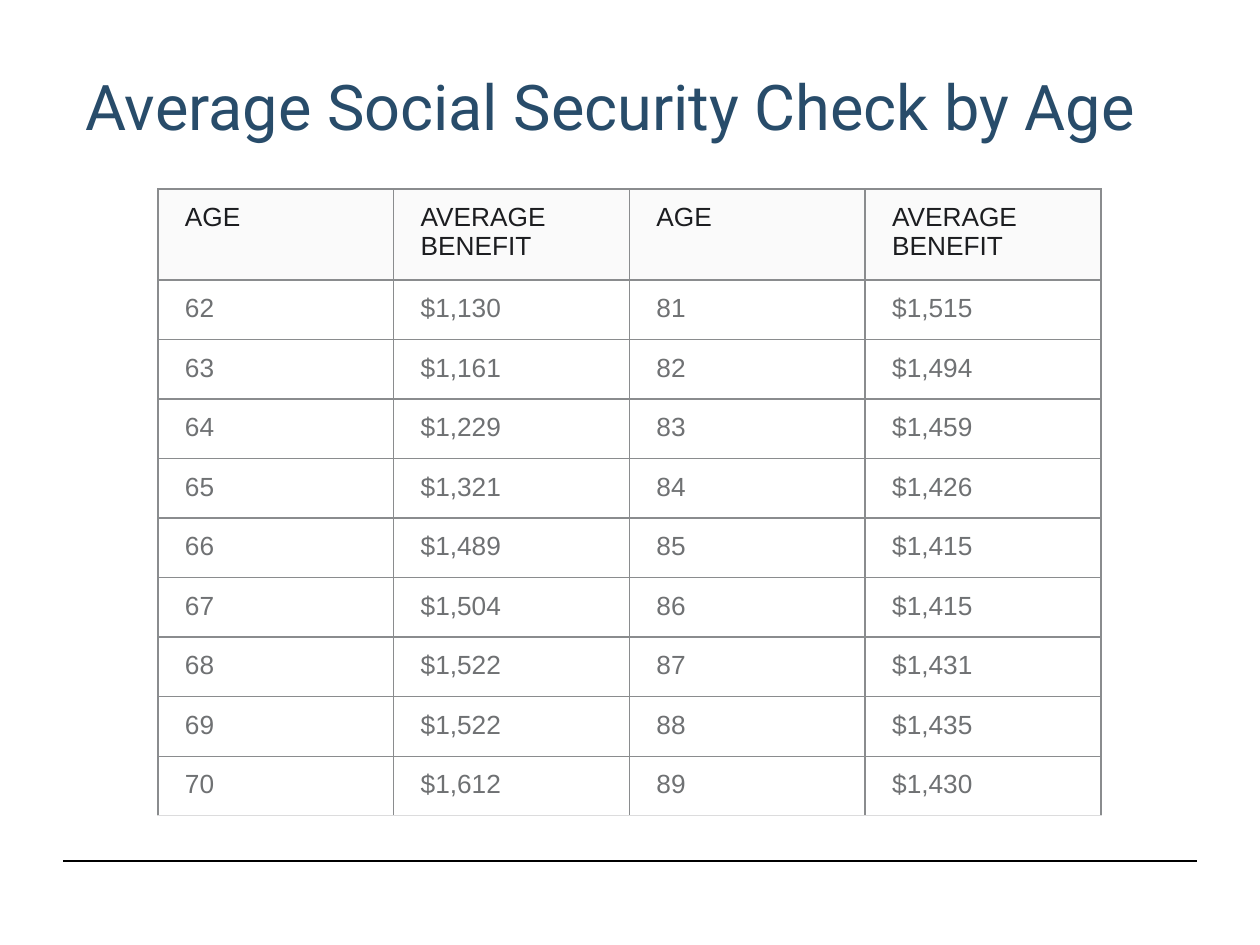
import pptx
import pptx.dml.color
import pptx.enum.shapes
import pptx.enum.text
import pptx.oxml
import pptx.oxml.ns
import pptx.util

RGBColor = pptx.dml.color.RGBColor

TITLE = "Average Social Security Check by Age"
HEADER = ("AGE", "AVERAGE BENEFIT", "AGE", "AVERAGE BENEFIT")
BENEFITS = [
    ("62", "$1,130", "81", "$1,515"),
    ("63", "$1,161", "82", "$1,494"),
    ("64", "$1,229", "83", "$1,459"),
    ("65", "$1,321", "84", "$1,426"),
    ("66", "$1,489", "85", "$1,415"),
    ("67", "$1,504", "86", "$1,415"),
    ("68", "$1,522", "87", "$1,431"),
    ("69", "$1,522", "88", "$1,435"),
    ("70", "$1,612", "89", "$1,430"),
]

NAVY = RGBColor(0x28, 0x4C, 0x6A)
BLACK = RGBColor(0x00, 0x00, 0x00)
HEADER_TEXT = RGBColor(0x1C, 0x1D, 0x20)
BODY_TEXT = RGBColor(0x6F, 0x71, 0x73)
HEADER_FILL = RGBColor(0xFA, 0xFA, 0xFA)
BORDER = RGBColor(0x8A, 0x8C, 0x8E)
BOTTOM_BORDER = RGBColor(0xDC, 0xDC, 0xDD)

PX_PER_INCH = 126
TITLE_BOX = (73, 42, 1113, 126)
TABLE_LEFT, TABLE_TOP, TABLE_WIDTH = 158, 189, 943
HEADER_HEIGHT, ROW_HEIGHT = 90, 59
CELL_MARGIN_X, CELL_MARGIN_Y = 27, 14
RULE_LEFT, RULE_RIGHT, RULE_Y = 63, 1197, 861


def px(length):
    return pptx.util.Emu(round(length * 914400 / PX_PER_INCH))


def add_text(text_frame, text, font_name, size, color):
    run = text_frame.paragraphs[0].add_run()
    run.text = text
    run.font.name = font_name
    run.font.size = pptx.util.Pt(size)
    run.font.color.rgb = color


def add_border(cell, side, color, width):
    properties = cell._tc.get_or_add_tcPr()
    properties.append(pptx.oxml.parse_xml(
        f'<a:ln{side} {pptx.oxml.ns.nsdecls("a")} w="{pptx.util.Pt(width)}">'
        f'<a:solidFill><a:srgbClr val="{color}"/></a:solidFill></a:ln{side}>'
    ))


def add_title(slide):
    text_frame = slide.shapes.add_textbox(*map(px, TITLE_BOX)).text_frame
    text_frame.word_wrap = True
    text_frame.vertical_anchor = pptx.enum.text.MSO_ANCHOR.MIDDLE
    add_text(text_frame, TITLE, "Roboto", 36, NAVY)


def add_rule(slide):
    rule = slide.shapes.add_connector(
        pptx.enum.shapes.MSO_CONNECTOR.STRAIGHT,
        px(RULE_LEFT), px(RULE_Y), px(RULE_RIGHT), px(RULE_Y),
    )
    rule.line.color.rgb = BLACK
    rule.line.width = pptx.util.Pt(0.75)
    rule._element.spPr.append(pptx.oxml.parse_xml(
        f'<a:effectLst {pptx.oxml.ns.nsdecls("a")}/>'
    ))


def fill_cell(cell, text, is_header, is_last):
    cell.margin_left = cell.margin_right = px(CELL_MARGIN_X)
    cell.margin_top = cell.margin_bottom = px(CELL_MARGIN_Y)
    for side in "LRT":
        add_border(cell, side, BORDER, 1)
    if is_last:
        add_border(cell, "B", BOTTOM_BORDER, 0.75)
    else:
        add_border(cell, "B", BORDER, 1)
    if is_header:
        cell.fill.solid()
        cell.fill.fore_color.rgb = HEADER_FILL
    else:
        cell.fill.background()
    add_text(cell.text_frame, text, "Arial", 15, HEADER_TEXT if is_header else BODY_TEXT)


def add_benefit_table(slide):
    rows = [HEADER, *BENEFITS]
    heights = [HEADER_HEIGHT] + [ROW_HEIGHT] * len(BENEFITS)
    table = slide.shapes.add_table(
        len(rows), len(HEADER),
        px(TABLE_LEFT), px(TABLE_TOP), px(TABLE_WIDTH), px(sum(heights)),
    ).table
    table.first_row = False
    table.horz_banding = False
    for column in table.columns:
        column.width = px(TABLE_WIDTH / len(HEADER))
    for row_index, (values, height) in enumerate(zip(rows, heights)):
        table.rows[row_index].height = px(height)
        for column_index, text in enumerate(values):
            fill_cell(
                table.cell(row_index, column_index), text,
                is_header=row_index == 0, is_last=row_index == len(rows) - 1,
            )


def main():
    presentation = pptx.Presentation()
    presentation.slide_width = px(1260)
    presentation.slide_height = px(945)
    slide = presentation.slides.add_slide(presentation.slide_layouts[6])
    add_rule(slide)
    add_title(slide)
    add_benefit_table(slide)
    presentation.save("out.pptx")


if __name__ == "__main__":
    main()
